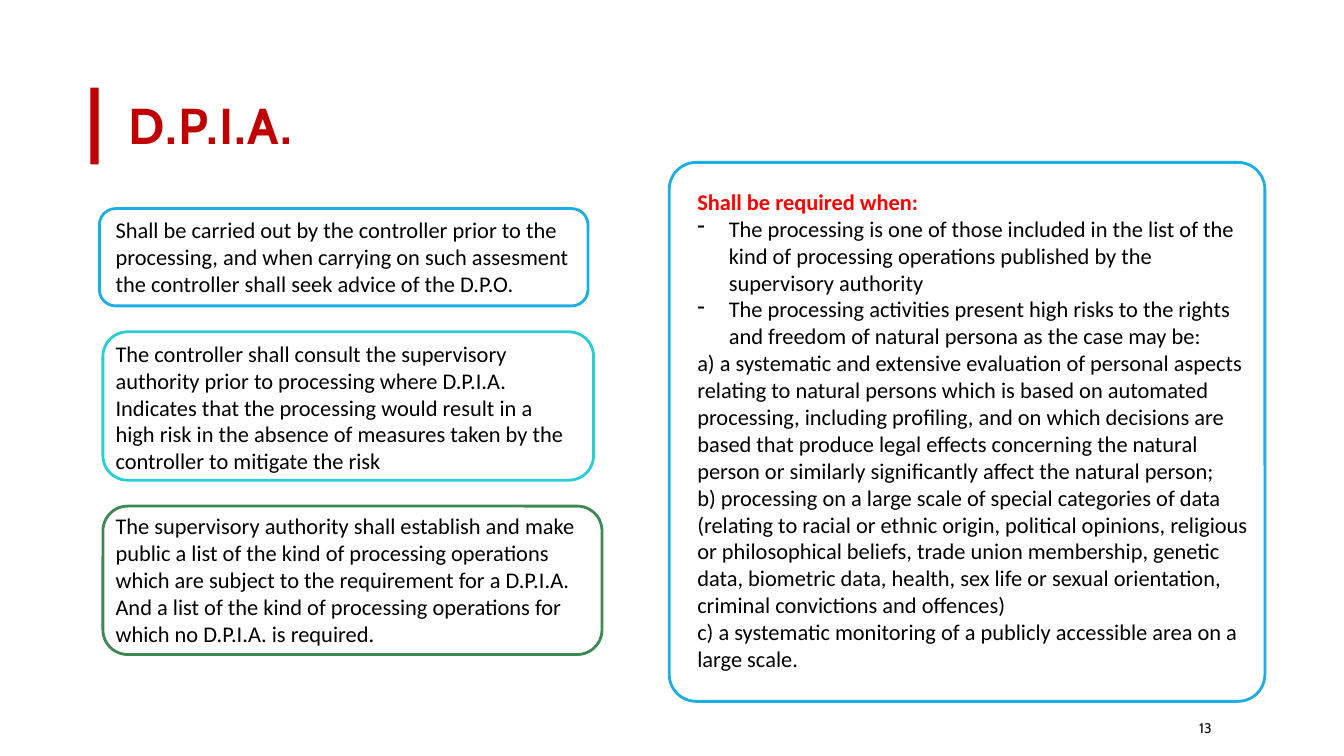
from lxml import etree
from pptx import Presentation
from pptx import util as u
from pptx.dml.color import RGBColor
from pptx.enum import shapes, text
from pptx.oxml.ns import qn

BLACK = RGBColor(0, 0, 0)
INK = RGBColor(0x0D, 0x0D, 0x0D)
RED = RGBColor(0xFF, 0, 0)
CRIMSON = RGBColor(0xC0, 0, 0)
BLUE = RGBColor(0x1C, 0xAD, 0xE4)
CYAN = RGBColor(0x27, 0xCE, 0xD7)
GREEN = RGBColor(0x3E, 0x88, 0x53)

CARDS = [
    (BLUE, (142, 298, 698, 139), (158, 305, 682, 124),
     "Shall be carried out by the controller prior to the processing, and when "
     "carrying on such assesment the controller shall seek advice of the D.P.O."),
    (CYAN, (147, 474, 701, 212), (158, 482, 668, 201),
     "The controller shall consult the supervisory authority prior to processing "
     "where D.P.I.A. Indicates that the processing would result in a high risk in "
     "the absence of measures taken by the controller to mitigate the risk"),
    (GREEN, (147, 723, 713, 212), (158, 728, 690, 201),
     "The supervisory authority shall establish and make public a list of the kind "
     "of processing operations which are subject to the requirement for a D.P.I.A. "
     "And a list of the kind of processing operations for which no D.P.I.A. is "
     "required."),
]

DASHED = [
    "The processing is one of those included in the list of the kind of processing "
    "operations published by the supervisory authority",
    "The processing activities present high risks to the rights and freedom of "
    "natural persona as the case may be:",
]

CASES = [
    "a) a systematic and extensive evaluation of personal aspects relating to "
    "natural persons which is based on automated processing, including profiling, "
    "and on which decisions are based that produce legal effects concerning the "
    "natural person or similarly significantly affect the natural person;",
    "b) processing on a large scale of special categories of data (relating to "
    "racial or ethnic origin, political opinions, religious or philosophical "
    "beliefs, trade union membership, genetic data, biometric data, health, sex "
    "life or sexual orientation, criminal convictions and offences)",
    "c) a systematic monitoring of a publicly accessible area on a large scale.",
]


class Deck:
    body = "Calibri"
    head = "Cabin"
    size = 32
    edge = 4
    dent = 45

    def __init__(self, wide, high):
        self.show = Presentation()
        self.show.slide_width = u.Pt(wide)
        self.show.slide_height = u.Pt(high)
        self.slide = self.show.slides.add_slide(self.show.slide_layouts[6])

    def shape(self, kind, box):
        item = self.slide.shapes.add_shape(kind, *map(u.Pt, box))
        item.shadow.inherit = False
        return item

    def bar(self, box, color):
        item = self.shape(shapes.MSO_SHAPE.RECTANGLE, box)
        item.fill.solid()
        item.fill.fore_color.rgb = color
        item.line.fill.background()

    def frame(self, box, color, round=None):
        item = self.shape(shapes.MSO_SHAPE.ROUNDED_RECTANGLE, box)
        item.fill.background()
        item.line.color.rgb = color
        item.line.width = u.Pt(self.edge)
        if round is not None:
            item.adjustments[0] = round

    def area(self, box, middle=False):
        field = self.slide.shapes.add_textbox(*map(u.Pt, box)).text_frame
        field.word_wrap = True
        if middle:
            field.vertical_anchor = text.MSO_ANCHOR.MIDDLE
        else:
            field.auto_size = text.MSO_AUTO_SIZE.SHAPE_TO_FIT_TEXT
        return field

    def run(self, para, words, color=BLACK, bold=False, size=None, font=None):
        part = para.add_run()
        part.text = words
        part.font.name = font or self.body
        part.font.size = u.Pt(size or self.size)
        part.font.bold = bold
        part.font.color.rgb = color
        return part

    def dash(self, para):
        props = para._p.get_or_add_pPr()
        props.set("marL", str(u.Pt(self.dent)))
        props.set("indent", str(-u.Pt(self.dent)))
        etree.SubElement(props, qn("a:buChar")).set("char", "-")

    def save(self):
        self.show.save("out.pptx")


def main():
    deck = Deck(1920, 1080)

    num = deck.area((1706, 1019, 153, 43), middle=True)
    deck.run(num.paragraphs[0], "13", INK, size=20, font=deck.head)

    for color, edge, inner, words in CARDS:
        deck.frame(edge, color)
        deck.run(deck.area(inner).paragraphs[0], words)

    deck.frame((956, 232, 851, 770), BLUE, 0.05)
    rules = deck.area((989, 265, 802, 705))
    deck.run(rules.paragraphs[0], "Shall be required when:", RED, bold=True)
    for words in DASHED:
        para = rules.add_paragraph()
        deck.dash(para)
        deck.run(para, words)
    for words in CASES:
        deck.run(rules.add_paragraph(), words)

    title = deck.area((176, 68, 1744, 236), middle=True).paragraphs[0]
    title.line_spacing = 0.8
    name = deck.run(title, "D.P.I.A.", CRIMSON, True, 72, deck.head)
    name._r.get_or_add_rPr().set("spc", "200")
    deck.bar((129, 125, 12, 110), CRIMSON)

    deck.save()


if __name__ == "__main__":
    main()
